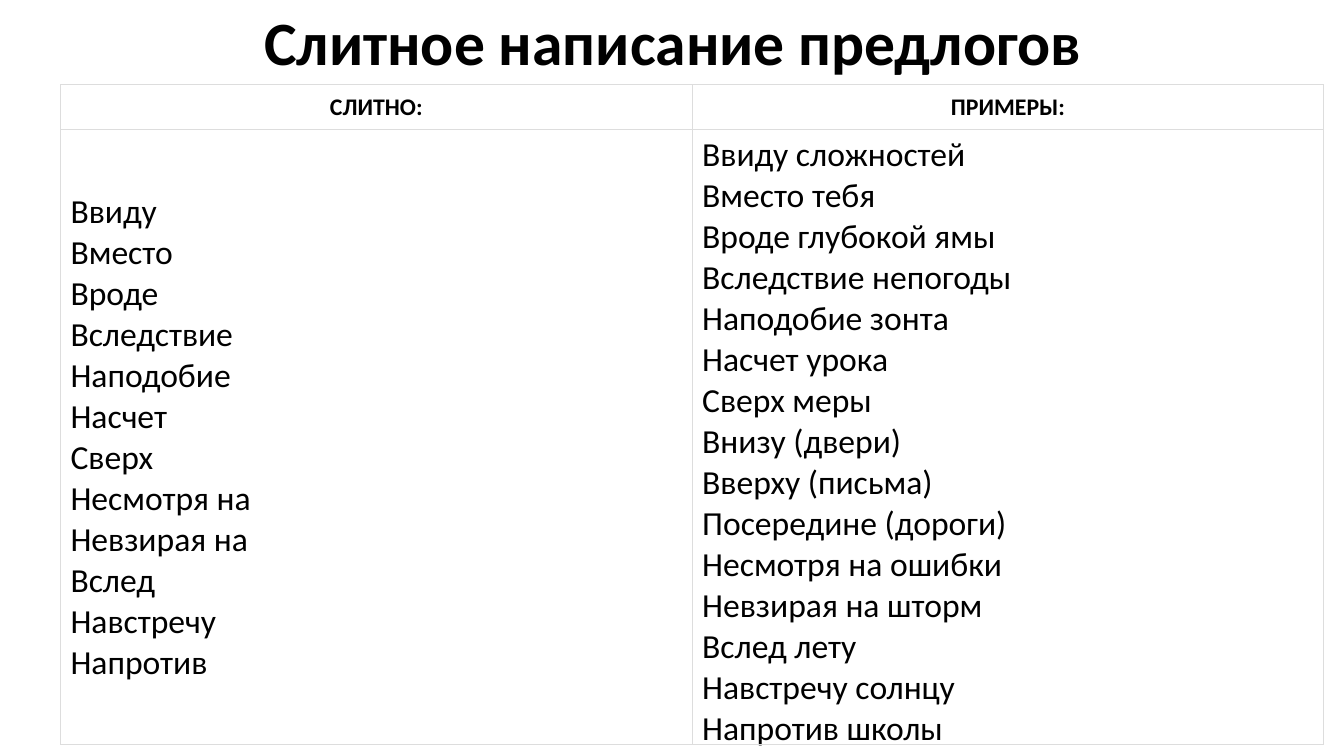
from lxml import etree
from pptx import Presentation
from pptx.dml.color import RGBColor
from pptx.enum import text
from pptx.oxml import ns
from pptx.util import Pt

BLACK = RGBColor(0x00, 0x00, 0x00)
WHITE = RGBColor(0xFF, 0xFF, 0xFF)
GREY = RGBColor(0xDD, 0xDD, 0xDD)
FONT = "Calibri"
MIDDLE = text.MSO_ANCHOR.MIDDLE
CENTER, LEFT = text.PP_ALIGN.CENTER, text.PP_ALIGN.LEFT

TITLE = "Слитное написание предлогов"
HEADS = ["СЛИТНО:", "ПРИМЕРЫ:"]
WORDS = ["Ввиду", "Вместо", "Вроде", "Вследствие", "Наподобие", "Насчет",
         "Сверх", "Несмотря на", "Невзирая на", "Вслед", "Навстречу",
         "Напротив"]
SAMPLES = ["Ввиду сложностей", "Вместо тебя", "Вроде глубокой ямы",
           "Вследствие непогоды", "Наподобие зонта", "Насчет урока",
           "Сверх меры", "Внизу (двери)", "Вверху (письма)",
           "Посередине (дороги)", "Несмотря на ошибки", "Невзирая на шторм",
           "Вслед лету", "Навстречу солнцу", "Напротив школы"]


def assign(target, values):
    for name, value in values.items():
        setattr(target, name, value)


def write(para, lines, size, bold, align):
    """Put the lines into one paragraph, parted by line breaks."""
    para.alignment = align
    for i, line in enumerate(lines):
        if i:
            para.add_line_break()
        run = para.add_run()
        run.text = line
        assign(run.font, {"name": FONT, "size": Pt(size), "bold": bold})
        run.font.color.rgb = BLACK
    assign(para.font, {"name": FONT, "size": Pt(size)})


def border(cell, color, width):
    props = cell._tc.get_or_add_tcPr()
    for side in ("a:lnL", "a:lnR", "a:lnT", "a:lnB"):
        line = etree.SubElement(props, ns.qn(side), w=str(Pt(width)))
        fill = etree.SubElement(line, ns.qn("a:solidFill"))
        etree.SubElement(fill, ns.qn("a:srgbClr"), val=str(color))


def title(slide, left, top, width, height):
    box = slide.shapes.add_textbox(Pt(left), Pt(top), Pt(width), Pt(height))
    frame = box.text_frame
    assign(frame, {"word_wrap": True, "vertical_anchor": MIDDLE})
    para = frame.paragraphs[0]
    para.line_spacing = 0.9
    write(para, [TITLE], 44, True, CENTER)


def table(slide, left, top, width, height, head=32.4):
    """Heading row of the given height, word lists in the rest of the box."""
    grid = slide.shapes.add_table(
        2, 2, Pt(left), Pt(top), Pt(width), Pt(height)).table
    for col in grid.columns:
        col.width = Pt(width / 2)
    for row, tall in zip(grid.rows, (head, height - head)):
        row.height = Pt(tall)
    rows = [([[name] for name in HEADS], 17, True, CENTER),
            ([WORDS, SAMPLES], 24, False, LEFT)]
    for r, (texts, *style) in enumerate(rows):
        for c, lines in enumerate(texts):
            cell = grid.cell(r, c)
            border(cell, GREY, 0.75)
            cell.fill.solid()
            cell.fill.fore_color.rgb = WHITE
            assign(cell, {"vertical_anchor": MIDDLE,
                          "margin_left": Pt(7.2), "margin_right": Pt(7.2),
                          "margin_top": Pt(3.6), "margin_bottom": Pt(3.6)})
            write(cell.text_frame.paragraphs[0], lines, *style)


def main():
    deck = Presentation()
    assign(deck, {"slide_width": Pt(960), "slide_height": Pt(540)})
    slide = deck.slides.add_slide(deck.slide_layouts[6])
    title(slide, 67, -20, 828, 104.4)
    table(slide, 43.2, 60.4, 902.4, 471.6)
    deck.save("out.pptx")


if __name__ == "__main__":
    main()
